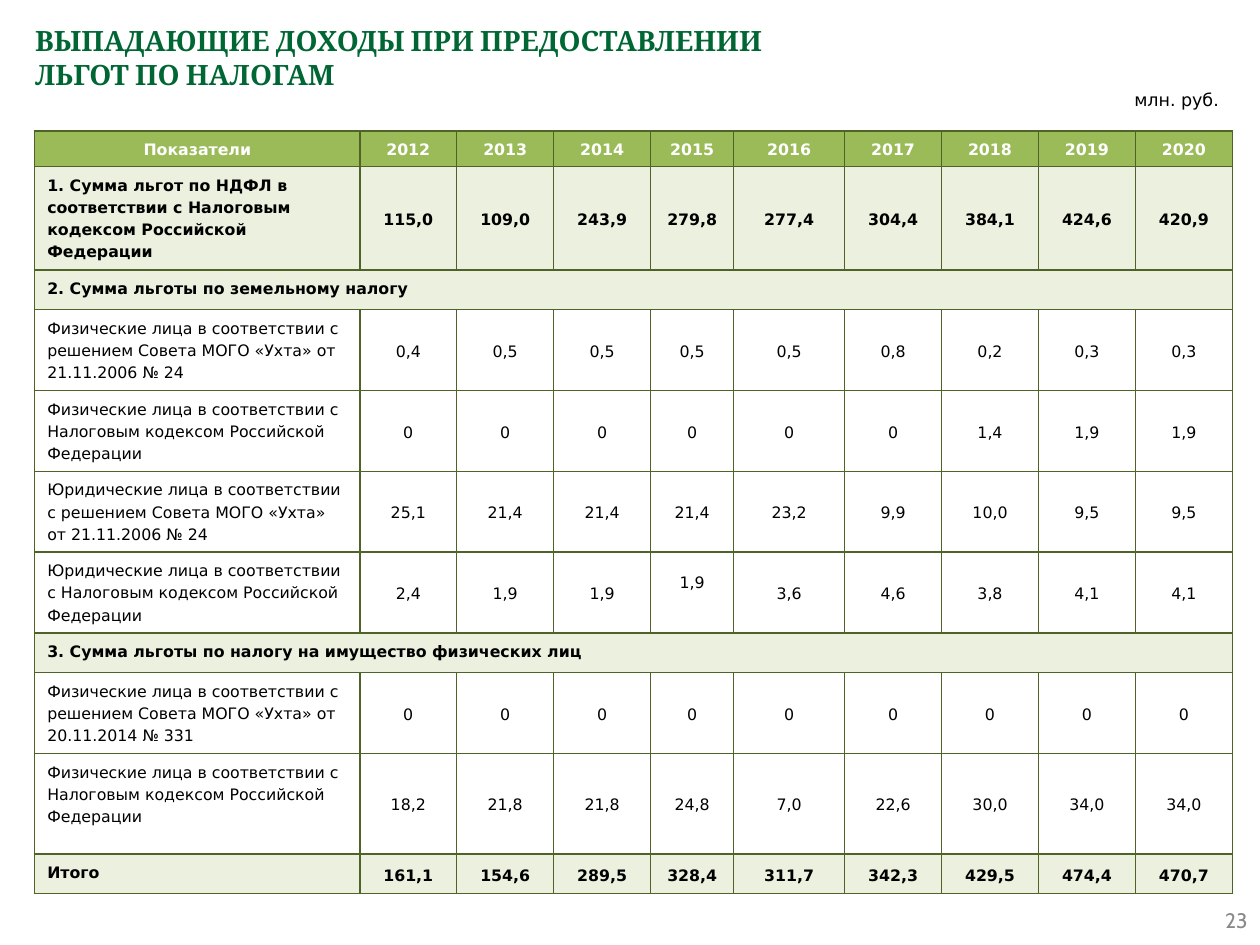
from lxml import etree
from pptx import Presentation
from pptx.dml.color import RGBColor
from pptx.enum import text
from pptx.oxml import ns
from pptx.util import Pt

TITLE_GREEN = RGBColor(0x00, 0x66, 0x33)
HEADER_GREEN = RGBColor(0x9B, 0xBB, 0x59)
PALE_GREEN = RGBColor(0xEB, 0xF1, 0xDE)
BORDER_GREEN = RGBColor(0x4F, 0x62, 0x28)
WHITE = RGBColor(0xFF, 0xFF, 0xFF)
BLACK = RGBColor(0x00, 0x00, 0x00)
GRAY = RGBColor(0x89, 0x89, 0x89)

ALIGN = text.PP_ALIGN
ANCHOR = text.MSO_ANCHOR
TABLE_FONT = "DejaVu Sans"
LINE_HEIGHT = 12.7
COLUMN_WIDTHS = [185.8] + [55.4] * 3 + [47.5, 63.4] + [55.4] * 4

SECTION, DETAIL, TOTAL = "section", "detail", "total"
HEADER = ["Показатели"] + [str(year) for year in range(2012, 2021)]
INDICATORS = [
    (TOTAL, 57.7, "1. Сумма льгот по НДФЛ в соответствии с Налоговым кодексом Российской Федерации",
     "115,0 109,0 243,9 279,8 277,4 304,4 384,1 424,6 420,9"),
    (SECTION, 22.7, "2. Сумма льготы по земельному налогу", ""),
    (DETAIL, 45.3, "Физические лица в соответствии с решением Совета МОГО «Ухта» от 21.11.2006 № 24",
     "0,4 0,5 0,5 0,5 0,5 0,8 0,2 0,3 0,3"),
    (DETAIL, 45.3, "Физические лица в соответствии с Налоговым кодексом Российской Федерации",
     "0 0 0 0 0 0 1,4 1,9 1,9"),
    (DETAIL, 45.3, "Юридические лица в соответствии с решением Совета МОГО «Ухта» от 21.11.2006 № 24",
     "25,1 21,4 21,4 21,4 23,2 9,9 10,0 9,5 9,5"),
    (DETAIL, 45.3, "Юридические лица в соответствии с Налоговым кодексом Российской Федерации",
     "2,4 1,9 1,9 1,9 3,6 4,6 3,8 4,1 4,1"),
    (SECTION, 22.7, "3. Сумма льготы по налогу на имущество физических лиц", ""),
    (DETAIL, 45.3, "Физические лица в соответствии с решением Совета МОГО «Ухта» от 20.11.2014 № 331",
     "0 0 0 0 0 0 0 0 0"),
    (DETAIL, 57.5, "Физические лица в соответствии с Налоговым кодексом Российской Федерации",
     "18,2 21,8 21,8 24,8 7,0 22,6 30,0 34,0 34,0"),
    (TOTAL, 22.7, "Итого", "161,1 154,6 289,5 328,4 311,7 342,3 429,5 474,4 470,7"),
]


def style_text(frame, wording, font, size, color, bold=False, align=ALIGN.LEFT):
    """Write one paragraph into a text frame and format it."""
    frame.text = wording
    paragraph = frame.paragraphs[0]
    paragraph.alignment = align
    for run in paragraph.runs:
        run.font.name = font
        run.font.size = Pt(size)
        run.font.bold = bold
        run.font.color.rgb = color
    return paragraph


def add_label(slide, box, wording, font, size, color, bold=False,
              align=ALIGN.LEFT, anchor=ANCHOR.TOP):
    """Place a wrapped line of text in the given box."""
    frame = slide.shapes.add_textbox(*map(Pt, box)).text_frame
    frame.word_wrap = True
    frame.vertical_anchor = anchor
    style_text(frame, wording, font, size, color, bold, align)


def add_borders(cell):
    """Draw a thin green line on all four sides of a cell."""
    properties = cell._tc.get_or_add_tcPr()
    for index, side in enumerate(("lnL", "lnR", "lnT", "lnB")):
        line = etree.Element(ns.qn(f"a:{side}"), w=str(Pt(1)))
        fill = etree.SubElement(line, ns.qn("a:solidFill"))
        etree.SubElement(fill, ns.qn("a:srgbClr"), val=str(BORDER_GREEN))
        properties.insert(index, line)


def fill_cell(cell, wording, color, bold, align, anchor, background):
    """Write and format one table cell."""
    paragraph = style_text(cell.text_frame, wording, TABLE_FONT, 9, color, bold, align)
    paragraph.line_spacing = 1.2
    cell.vertical_anchor = anchor
    if background is None:
        cell.fill.background()
    else:
        cell.fill.solid()
        cell.fill.fore_color.rgb = background
    add_borders(cell)


def add_benefits_table(slide, left, top):
    """Build the table of tax benefits by year."""
    heights = [20] + [height for _, height, _, _ in INDICATORS]
    table = slide.shapes.add_table(
        len(heights), len(COLUMN_WIDTHS), Pt(left), Pt(top),
        Pt(sum(COLUMN_WIDTHS)), Pt(sum(heights))).table
    for column, width in zip(table.columns, COLUMN_WIDTHS):
        column.width = Pt(width)
    for row, height in zip(table.rows, heights):
        row.height = Pt(height)
    for cell, heading in zip(table.rows[0].cells, HEADER):
        fill_cell(cell, heading, WHITE, True, ALIGN.CENTER, ANCHOR.TOP, HEADER_GREEN)
    for number, (kind, _, indicator, amounts) in enumerate(INDICATORS, 1):
        bold = kind != DETAIL
        background = PALE_GREEN if bold else None
        values = amounts.split() or [""] * (len(HEADER) - 1)
        cells = list(table.rows[number].cells)
        fill_cell(cells[0], indicator, BLACK, bold, ALIGN.LEFT, ANCHOR.TOP, background)
        for cell, value in zip(cells[1:], values):
            fill_cell(cell, value, BLACK, bold, ALIGN.CENTER, ANCHOR.MIDDLE, background)
        if kind == SECTION:
            cells[0].merge(cells[-1])
    table.cell(6, 4).margin_bottom = Pt(3.6 + LINE_HEIGHT)


def main():
    """Build the slide and save it."""
    deck = Presentation()
    deck.slide_width, deck.slide_height = Pt(720), Pt(540)
    slide = deck.slides.add_slide(deck.slide_layouts[6])
    add_label(slide, (13, 10, 433.4, 82.8),
              "ВЫПАДАЮЩИЕ ДОХОДЫ ПРИ ПРЕДОСТАВЛЕНИИ ЛЬГОТ ПО НАЛОГАМ",
              "Cambria", 16, TITLE_GREEN, bold=True)
    add_label(slide, (552.2, 511.2, 167.8, 28.8), "23", "Cabin", 12, GRAY,
              align=ALIGN.RIGHT, anchor=ANCHOR.MIDDLE)
    add_benefits_table(slide, 19.8, 74.9)
    add_label(slide, (618.5, 47.5, 85, 19.4), "млн. руб.", TABLE_FONT, 10, BLACK,
              align=ALIGN.RIGHT)
    deck.save("out.pptx")


if __name__ == "__main__":
    main()
